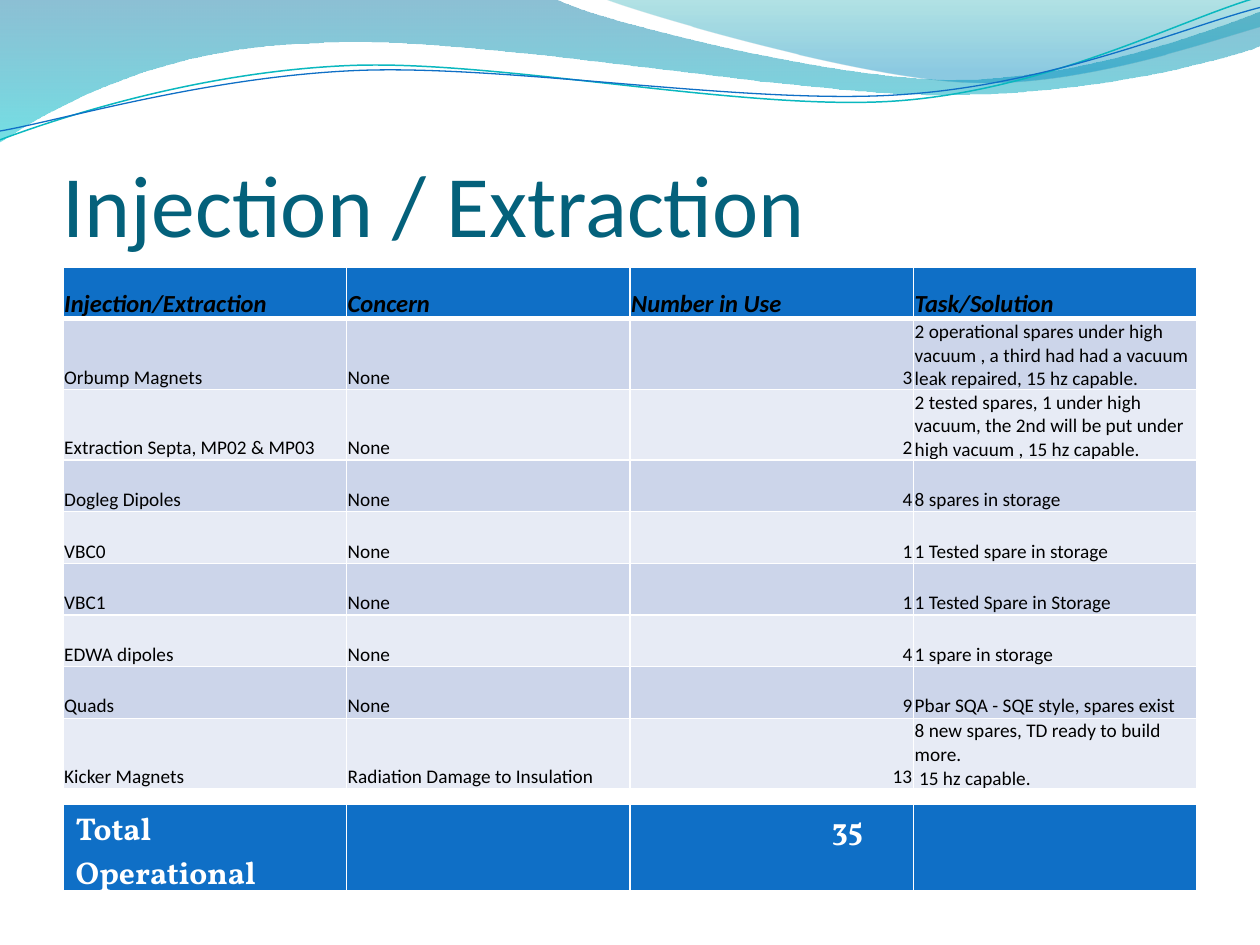
from math import cos, radians, sin

from lxml.etree import SubElement
from pptx import Presentation
from pptx.dml.color import RGBColor
from pptx.enum.text import MSO_ANCHOR, PP_ALIGN
from pptx.oxml.ns import qn
from pptx.util import Inches, Pt

BLUE, WHITE, BLACK = "0F6FC6", "FFFFFF", "000000"
BANDS = ["E7EBF5", "CCD5EA"]


def rgb(code):
    return RGBColor.from_string(code)


def write(frame, text, size=11, font="Calibri", color=BLACK, bold=False,
          italic=False, align=PP_ALIGN.LEFT):
    """Fill a text frame, one paragraph for each line of text."""
    for i, line in enumerate(text.split("\n")):
        para = frame.add_paragraph() if i else frame.paragraphs[0]
        para.alignment = align
        run = para.add_run()
        run.text = line
        run.font.size = Pt(size)
        run.font.name = font
        run.font.color.rgb = rgb(color)
        run.font.bold = bold
        run.font.italic = italic


deck = Presentation()
deck.slide_width, deck.slide_height = Inches(10), Inches(7.5)
slide = deck.slides.add_slide(deck.slide_layouts[6])
shapes = slide.shapes

# Each wave: start, then steps (2 numbers: line, 6 numbers: Bezier curve),
# then gradient stops (position, colour, opacity in percent)
# or a line format (colour, width, centre of the turn).
TURN = -2.7
waves = [
    ((0, 0), [(4.4, -0.01), (4.76, 0.17, 6.64, 0.63, 7.58, 0.63),
              (8.53, 0.63, 9.58, 0.26, 10, 0.09), (10.01, 0.36),
              (9.83, 0.44, 8.7, 0.76, 7.46, 0.75),
              (6.22, 0.75, 3.82, 0.28, 2.57, 0.34),
              (1.29, 0.36, 0.46, 0.83, -0.01, 1.13), (0, 0)],
     [(0, "0074A1", 45), (1, "00C6CF", 55)], None),
    ((4.79, -0.01), [(5.09, 0.11, 6.82, 0.62, 7.69, 0.65),
                     (8.56, 0.69, 9.61, 0.32, 10, 0.21), (10, 0),
                     (4.79, -0.01)],
     [(0, "00A1A9", 30), (0.8, "008BBF", 45)], None),
    ((0, 1.11), [(0.48, 0.93, 1.58, 0.57, 2.77, 0.52),
                 (3.95, 0.47, 5.93, 0.89, 7.13, 0.8),
                 (8.33, 0.71, 9.38, 0.15, 9.98, -0.02)],
     None, ("0AB8BF", 0.85, (4.99, 0.58))),
    ((0, 1.04), [(0.47, 0.96, 1.64, 0.61, 2.83, 0.56),
                 (4.03, 0.51, 5.97, 0.84, 7.17, 0.75),
                 (8.36, 0.67, 9.41, 0.21, 10, 0.06)],
     None, (BLUE, 0.75, (5, 0.59))),
]
for start, moves, stops, line in waves:
    dots = [start] + [move[k:k + 2] for move in moves
                      for k in range(0, len(move), 2)]
    if line:
        cx, cy = line[2]
        co, si = cos(radians(-TURN)), sin(radians(-TURN))
        dots = [(cx + (x - cx) * co - (y - cy) * si,
                 cy + (x - cx) * si + (y - cy) * co) for x, y in dots]
    dots = [(Inches(x), Inches(y)) for x, y in dots]
    pen = shapes.build_freeform(*dots[0])
    pen.add_line_segments(dots[1:], close=bool(stops))
    wave = pen.convert_to_shape()
    # Join each three control points into one curve.
    nodes = iter(list(wave.element.iter(qn("a:lnTo"))))
    for move in moves:
        first = next(nodes)
        if len(move) == 6:
            first.tag = qn("a:cubicBezTo")
            for _ in range(2):
                node = next(nodes)
                first.append(node[0])
                node.getparent().remove(node)
    wave.shadow.inherit = False
    if stops:
        wave.line.fill.background()
        wave.fill.gradient()
        wave.fill.gradient_angle = 270
        for stop, (place, code, _) in zip(wave.fill.gradient_stops, stops):
            stop.position = place
            stop.color.rgb = rgb(code)
        for node, (_, _, alpha) in zip(wave.element.iter(qn("a:srgbClr")), stops):
            SubElement(node, qn("a:alpha"), val=str(alpha * 1000))
    else:
        wave.rotation = TURN
        wave.fill.background()
        wave.line.color.rgb = rgb(line[0])
        wave.line.width = Pt(line[1])

title = shapes.add_textbox(Inches(0.5), Inches(0.77), Inches(9), Inches(1.25))
frame = title.text_frame
frame.word_wrap = True
frame.margin_left = frame.margin_right = frame.margin_bottom = 0
frame.vertical_anchor = MSO_ANCHOR.BOTTOM
write(frame, "Injection / Extraction", size=50, color="04617B")

parts = [
    ("Injection/Extraction", "Concern", "Number in Use", "Task/Solution"),
    ("Orbump Magnets", "None", "3", "2 operational spares under high vacuum , "
     "a third had had a vacuum leak repaired, 15 hz capable."),
    ("Extraction Septa, MP02 & MP03", "None", "2", "2 tested spares, 1 under "
     "high vacuum, the 2nd will be put under high vacuum , 15 hz capable."),
    ("Dogleg Dipoles", "None", "4", "8 spares in storage"),
    ("VBC0", "None", "1", "1 Tested spare in storage"),
    ("VBC1", "None", "1", "1 Tested Spare in Storage"),
    ("EDWA dipoles", "None", "4", "1 spare in storage"),
    ("Quads", "None", "9", "Pbar SQA - SQE style, spares exist"),
    ("Kicker Magnets", "Radiation Damage to Insulation", "13",
     "8 new spares, TD ready to build more.\n 15 hz capable."),
]
total = [("Total Operational", "", "35", "")]

for rows, top, tall, high in ((parts, 2.12, 4.11, 0.41), (total, 6.38, 0.7, 0.67)):
    holder = shapes.add_table(len(rows), 4, Inches(0.5), Inches(top), Inches(9),
                              Inches(tall))
    table = holder.table
    for r, row in enumerate(rows):
        table.rows[r].height = Inches(high)
        for c, text in enumerate(row):
            cell = table.cell(r, c)
            for side in "LRTB":
                thick = side == "B" and r == 0
                edge = SubElement(cell._tc.get_or_add_tcPr(), qn("a:ln" + side),
                                  w=str(Pt(3 if thick else 1)))
                SubElement(SubElement(edge, qn("a:solidFill")),
                           qn("a:srgbClr"), val=WHITE)
            cell.fill.solid()
            cell.fill.fore_color.rgb = rgb(BANDS[r % 2] if r else BLUE)
            align = PP_ALIGN.LEFT
            if c == 2 and (r or rows is total):
                align = PP_ALIGN.RIGHT
            if rows is parts:
                cell.vertical_anchor = MSO_ANCHOR.BOTTOM
                cell.margin_left = cell.margin_right = cell.margin_top = Inches(0.01)
                cell.margin_bottom = 0
                write(cell.text_frame, text, size=11 if r else 14,
                      bold=r == 0, italic=r == 0, align=align)
            elif text:
                if c == 2:
                    cell.margin_right = Inches(0.4)
                write(cell.text_frame, text, size=18, font="Vollkorn",
                      color=WHITE, bold=True, align=align)
    holder.height = Inches(tall)

deck.save("out.pptx")
